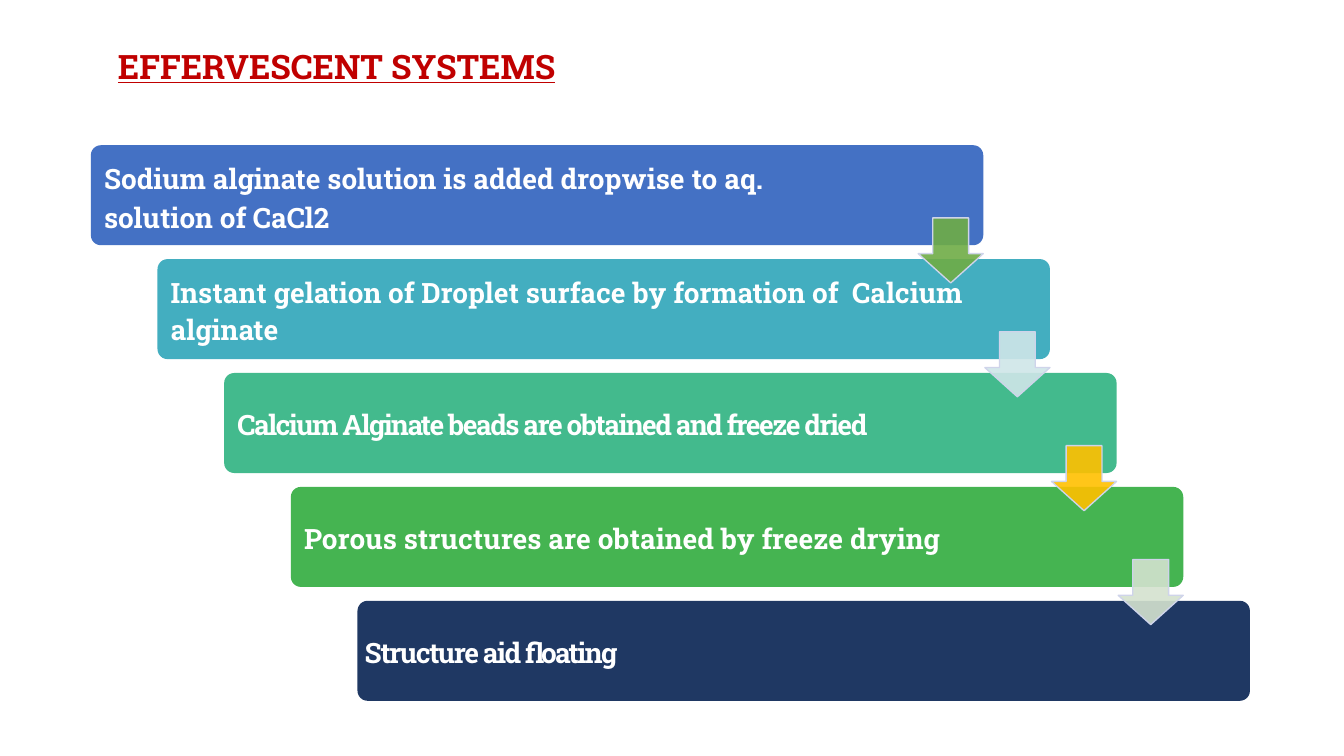
from lxml import etree
from pptx import Presentation
from pptx.dml.color import RGBColor
from pptx.enum.shapes import MSO_SHAPE
from pptx.enum.text import MSO_ANCHOR, PP_ALIGN
from pptx.oxml.ns import qn
from pptx.util import Cm, Pt

ROUNDED = MSO_SHAPE.ROUNDED_RECTANGLE
DOWN_ARROW = MSO_SHAPE.DOWN_ARROW
MIDDLE = MSO_ANCHOR.MIDDLE
LEFT = PP_ALIGN.LEFT

COLORS = {
    "title": "C00000", "text": "FFFFFF", "arrow_line": "CFD4EA",
    "blue": "4471C4", "teal": "43AEC0", "mint": "43BA8D",
    "green": "45B451", "navy": "1F3863",
    "leaf": "6FAC46", "ice": "CFE6E8", "amber": "FFC000", "sage": "D4E2CF",
}
FONT = {"name": "Roboto Slab", "bold": True}
TITLE_FONT = {**FONT, "size": Pt(24), "underline": True}
STEP_FONT = {**FONT, "size": Pt(20)}

BAR_X, BAR_Y, BAR_W, BAR_H = 2.29, 3.66, 22.49, 2.52
STEP_X, STEP_Y = 1.68, 2.87
ARROW_Y, ARROW_SIZE = 5.49, 1.64

STEPS = [
    ("Sodium alginate solution is added dropwise to aq.\nsolution of CaCl2", "blue", 0.26, 27.6, 0),
    ("Instant gelation of Droplet surface by formation of  Calcium alginate", "teal", 0.26, 26.4, 0),
    ("Calcium Alginate beads are obtained and freeze dried", "mint", 0.26, 26.4, -110),
    ("Porous structures are obtained by freeze drying", "green", 0.26, 26.4, 0),
    ("Structure aid floating", "navy", 0.11, 26.4, -110),
]
ARROWS = ["leaf", "ice", "amber", "sage"]


def format_text(r, values, color):
    for name, value in values.items():
        setattr(r.font, name, value)
    r.font.color.rgb = RGBColor.from_string(COLORS[color])


def add_filled(kind, x, y, w, h, color):
    sp = s.shapes.add_shape(kind, Cm(x), Cm(y), Cm(w), Cm(h))
    sp.shadow.inherit = False
    sp.fill.solid()
    sp.fill.fore_color.rgb = RGBColor.from_string(COLORS[color])
    return sp


prs = Presentation()
prs.slide_width, prs.slide_height = Cm(33.87), Cm(19.05)
s = prs.slides.add_slide(prs.slide_layouts[5])

title = s.shapes.title
title.left, title.top, title.width, title.height = Cm(2.97), Cm(1.12), Cm(16.87), Cm(1.07)
tf = title.text_frame
tf.margin_left = tf.margin_right = tf.margin_top = tf.margin_bottom = 0
tf.vertical_anchor = MIDDLE
p = tf.paragraphs[0]
p.alignment = LEFT
r = p.add_run()
r.text = "EFFERVESCENT SYSTEMS"
format_text(r, TITLE_FONT, "title")

for i, (text, color, inset, leading, spacing) in enumerate(STEPS):
    sp = add_filled(ROUNDED, BAR_X + i * STEP_X, BAR_Y + i * STEP_Y, BAR_W, BAR_H, color)
    sp.adjustments[0] = 0.1
    sp.line.fill.background()
    tf = sp.text_frame
    tf.word_wrap = True
    tf.vertical_anchor = MIDDLE
    tf.margin_left, tf.margin_right = Cm(inset), Cm(0.25)
    tf.margin_top = tf.margin_bottom = 0
    tf.text = text
    for p in tf.paragraphs:
        p.alignment = LEFT
        p.line_spacing = Pt(leading)
        r = p.runs[0]
        format_text(r, STEP_FONT, "text")
        r._r.get_or_add_rPr().set("spc", str(spacing))

for i, color in enumerate(ARROWS):
    x = BAR_X + BAR_W - ARROW_SIZE + i * STEP_X
    sp = add_filled(DOWN_ARROW, x, ARROW_Y + i * STEP_Y, ARROW_SIZE, ARROW_SIZE, color)
    sp.adjustments[0], sp.adjustments[1] = 0.55, 0.45
    sp.line.color.rgb = RGBColor.from_string(COLORS["arrow_line"])
    sp.line.width = Pt(0.96)
    fill = sp._element.spPr.find(qn("a:solidFill"))
    etree.SubElement(fill[0], qn("a:alpha")).set("val", "90000")

prs.save("out.pptx")
